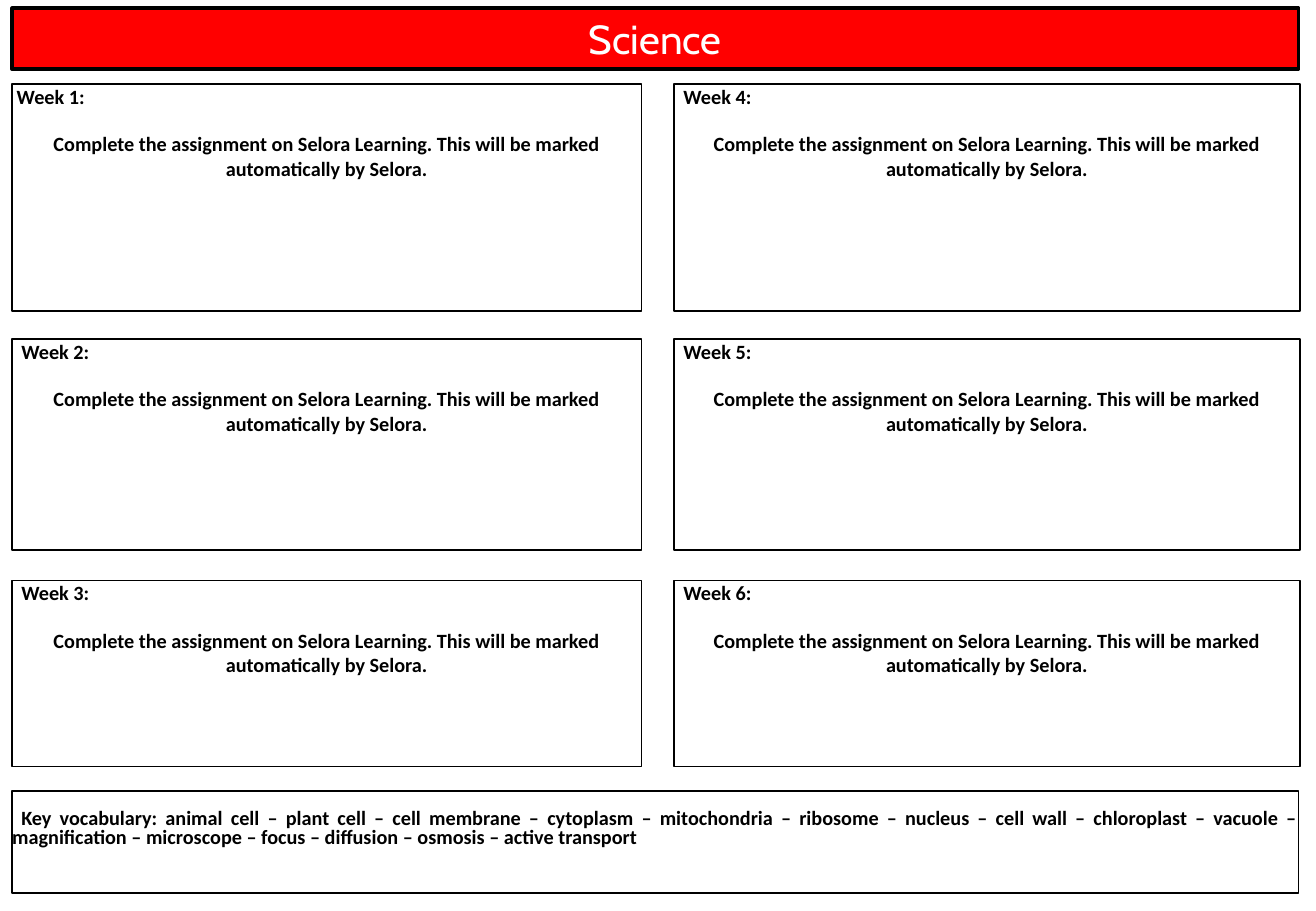
from dataclasses import dataclass

from pptx import Presentation
from pptx import util as u
from pptx.dml.color import RGBColor
from pptx.enum import shapes, text


@dataclass(frozen=True)
class Theme:
    banner: RGBColor = RGBColor(0xFF, 0x00, 0x00)
    ink: RGBColor = RGBColor(0x00, 0x00, 0x00)
    light: RGBColor = RGBColor(0xFF, 0xFF, 0xFF)
    title_font: str = "Cabin"
    body_font: str = "Calibri"
    title_size: float = 24
    body_size: float = 12


SPACE = 2.7  # width of one body space
LEFT = 7.2
FULL_WIDTH = 762.5
COLUMNS = [(LEFT, 373), (399.6, 370.8)]  # left, width
ROWS = [(49.7, 134.6), (200.9, 125.3), (344.2, 110.2)]  # top, height
TASK = ("Complete the assignment on Selora Learning. "
        "This will be marked automatically by Selora.")
VOCABULARY = ["animal cell", "plant cell", "cell membrane", "cytoplasm",
              "mitochondria", "ribosome", "nucleus", "cell wall", "chloroplast",
              "vacuole", "magnification", "microscope", "focus", "diffusion",
              "osmosis", "active transport"]


def write(paragraph, words, *, font, size, color, bold=False,
          align=text.PP_ALIGN.LEFT, before=0, line=None, margin=0, indent=0):
    """Fill a paragraph with text in the given format."""
    properties = paragraph._p.get_or_add_pPr()
    properties.set("marL", str(u.Pt(margin)))
    properties.set("indent", str(u.Pt(indent)))
    paragraph.alignment = align
    paragraph.space_before = u.Pt(before)
    if line:
        paragraph.line_spacing = u.Pt(line)
    run = paragraph.add_run()
    run.text = words
    run.font.name = font
    run.font.size = u.Pt(size)
    run.font.bold = bold
    run.font.color.rgb = color


class Worksheet:
    def __init__(self, slide, theme):
        self.slide = slide
        self.theme = theme
        self.body = dict(font=theme.body_font, size=theme.body_size,
                         color=theme.ink, bold=True)

    def box(self, left, top, width, height, *, fill=None, line=1,
            anchor=text.MSO_ANCHOR.TOP, inset_top=0):
        shape = self.slide.shapes.add_shape(
            shapes.MSO_SHAPE.RECTANGLE,
            u.Pt(left), u.Pt(top), u.Pt(width), u.Pt(height))
        shape.shadow.inherit = False
        if fill is None:
            shape.fill.background()
        else:
            shape.fill.solid()
            shape.fill.fore_color.rgb = fill
        shape.line.color.rgb = self.theme.ink
        shape.line.width = u.Pt(line)
        frame = shape.text_frame
        frame.word_wrap = True
        frame.vertical_anchor = anchor
        frame.margin_left = frame.margin_right = frame.margin_bottom = 0
        frame.margin_top = u.Pt(inset_top)
        return frame

    def banner(self, words):
        frame = self.box(LEFT, 5, FULL_WIDTH, 36, fill=self.theme.banner,
                         line=2.25, anchor=text.MSO_ANCHOR.MIDDLE)
        write(frame.paragraphs[0], words, font=self.theme.title_font,
              size=self.theme.title_size, color=self.theme.light,
              align=text.PP_ALIGN.CENTER)

    def week(self, number, column, row):
        (left, width), (top, height) = column, row
        frame = self.box(left, top, width, height)
        write(frame.paragraphs[0], f"Week {number}:", **self.body,
              margin=SPACE if number == 1 else 2 * SPACE)
        write(frame.add_paragraph(), TASK, **self.body, before=13.9,
              align=text.PP_ALIGN.CENTER)

    def vocabulary(self, terms):
        leading = 11.5
        frame = self.box(LEFT, 468.7, FULL_WIDTH, 60.5, inset_top=leading)
        write(frame.paragraphs[0], "Key vocabulary: " + " – ".join(terms),
              **self.body, align=text.PP_ALIGN.JUSTIFY, line=leading,
              indent=2 * SPACE)


def main():
    presentation = Presentation()
    presentation.slide_width = u.Pt(780)
    presentation.slide_height = u.Pt(540)
    slide = presentation.slides.add_slide(presentation.slide_layouts[6])
    worksheet = Worksheet(slide, Theme())

    # Title
    worksheet.banner("Science")

    # Weekly tasks, numbered down each column
    for column_index, column in enumerate(COLUMNS):
        for row_index, row in enumerate(ROWS):
            number = column_index * len(ROWS) + row_index + 1
            worksheet.week(number, column, row)

    # Key words
    worksheet.vocabulary(VOCABULARY)

    presentation.save("out.pptx")


if __name__ == "__main__":
    main()
